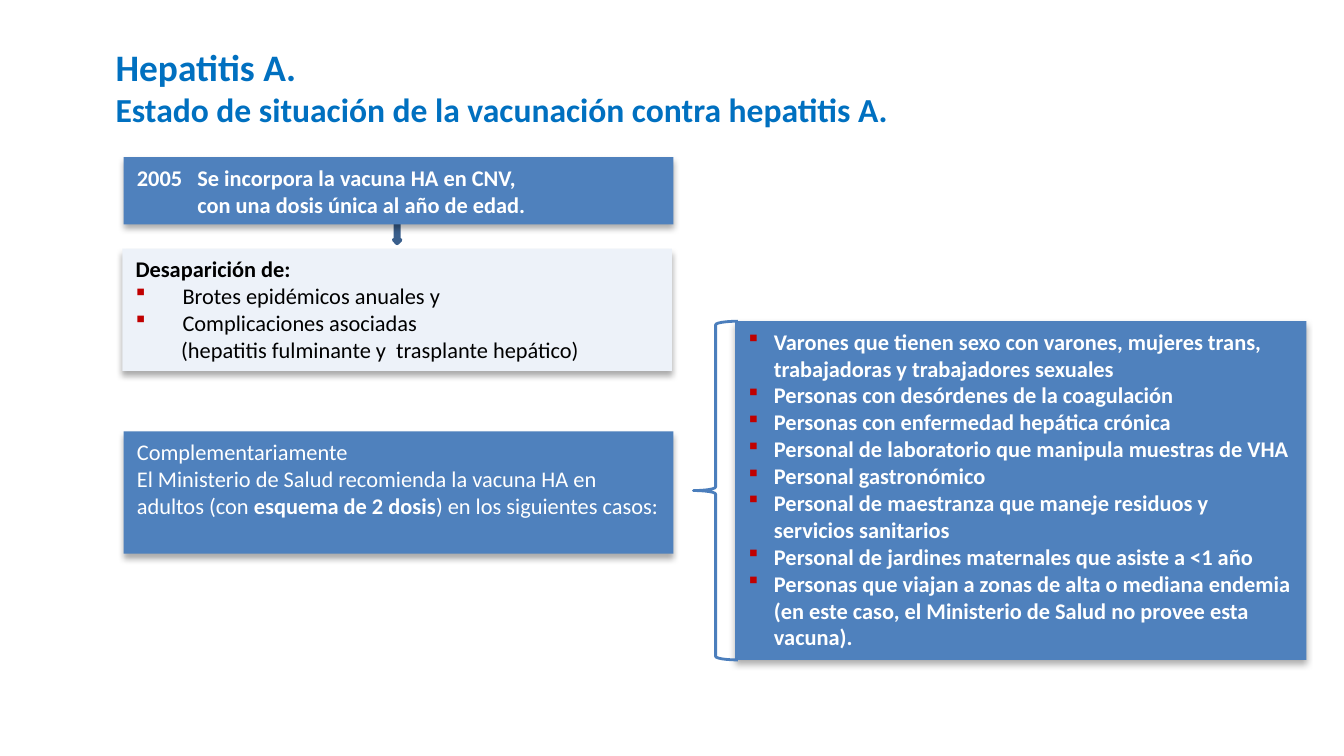
from dataclasses import dataclass

from lxml import etree
from pptx import Presentation
from pptx.dml.color import RGBColor
from pptx.enum import shapes, text
from pptx.oxml import ns
from pptx.util import Inches, Pt


@dataclass(frozen=True)
class Theme:
    font: str = "Calibri"
    bullet_font: str = "Wingdings"
    title: str = "0070C0"
    blue: str = "4F81BD"
    pale: str = "EDF2F9"
    arrow_line: str = "3A5F8C"
    brace_line: str = "4B7EBC"
    bullet: str = "C00000"
    white: str = "FFFFFF"
    black: str = "000000"
    title_size: int = 20
    subtitle_size: int = 18
    body_size: int = 12


THEME = Theme()
COLUMN_LEFT, COLUMN_WIDTH = 0.92, 4.09
GROUPS_LEFT, GROUPS_TOP, GROUPS_HEIGHT = 5.47, 2.39, 2.52
RISK_GROUPS = [
    "Varones que tienen sexo con varones, mujeres trans, trabajadoras y trabajadores sexuales",
    "Personas con desórdenes de la coagulación",
    "Personas con enfermedad hepática crónica",
    "Personal de laboratorio que manipula muestras de VHA",
    "Personal gastronómico",
    "Personal de maestranza que maneje residuos y servicios sanitarios",
    "Personal de jardines maternales que asiste a <1 año",
    "Personas que viajan a zonas de alta o mediana endemia (en este caso, "
    "el Ministerio de Salud no provee esta vacuna).",
]


def rgb(value):
    return RGBColor.from_string(value)


def add_child(parent, tag, **attributes):
    return etree.SubElement(parent, ns.qn(tag), attributes)


def style(paragraph, size, color, bold=None):
    font = paragraph.font
    font.name, font.size, font.bold = THEME.font, Pt(size), bold
    font.color.rgb = rgb(color)


def indent(paragraph, margin, first=0, bullet=False):
    """Set the left margin and first-line offset, with an optional square bullet."""
    properties = paragraph._p.get_or_add_pPr()
    properties.set("marL", str(Inches(margin)))
    properties.set("indent", str(Inches(first)))
    if bullet:
        color = add_child(properties, "a:buClr")
        add_child(color, "a:srgbClr", val=THEME.bullet)
        add_child(properties, "a:buFont", typeface=THEME.bullet_font, charset="2")
        add_child(properties, "a:buChar", char="§")  # a small square in the bullet font


def add_line(frame, runs, color, bold=None, margin=0, first=0, bullet=False):
    """Write one paragraph; runs are (wording, bold) pairs or a plain string."""
    paragraph = frame.paragraphs[0]
    if paragraph.runs:
        paragraph = frame.add_paragraph()
    paragraph.alignment = text.PP_ALIGN.LEFT
    indent(paragraph, margin, first, bullet)
    style(paragraph, THEME.body_size, color, bold)
    if isinstance(runs, str):
        runs = [(runs, bold)]
    for wording, run_bold in runs:
        run = paragraph.add_run()
        run.text = wording
        run.font.bold = run_bold


def add_shape(slide, kind, left, top, width, height, fill=None, line=None, line_width=1):
    shape = slide.shapes.add_shape(
        kind, Inches(left), Inches(top), Inches(width), Inches(height))
    shape.shadow.inherit = False
    if fill:
        shape.fill.solid()
        shape.fill.fore_color.rgb = rgb(fill)
    else:
        shape.fill.background()
    if line:
        shape.line.color.rgb = rgb(line)
        shape.line.width = Pt(line_width)
    else:
        shape.line.fill.background()
    return shape


def add_card(slide, left, top, width, height, fill):
    """Add a shadowed box and return its text frame."""
    card = add_shape(slide, shapes.MSO_SHAPE.RECTANGLE, left, top, width, height, fill)
    effects = card._element.spPr.find(ns.qn("a:effectLst"))
    shadow = add_child(effects, "a:outerShdw", blurRad=str(Pt(3.5)), dist=str(Pt(2.2)),
                       dir="5400000", rotWithShape="0")
    color = add_child(shadow, "a:srgbClr", val=THEME.black)
    add_child(color, "a:alpha", val="32000")
    frame = card.text_frame
    frame.word_wrap = True
    frame.vertical_anchor = text.MSO_ANCHOR.TOP
    return frame


def add_title(slide):
    title = slide.shapes.title
    title.left, title.top = Inches(0.76), Inches(0.27)
    title.width, title.height = Inches(8.67), Inches(0.75)
    frame = title.text_frame
    frame.text = "Hepatitis A.\nEstado de situación de la vacunación contra hepatitis A."
    frame.auto_size = text.MSO_AUTO_SIZE.NONE
    frame.vertical_anchor = text.MSO_ANCHOR.MIDDLE
    for paragraph, size in zip(frame.paragraphs, (THEME.title_size, THEME.subtitle_size)):
        paragraph.alignment = text.PP_ALIGN.LEFT
        style(paragraph, size, THEME.title, True)


def add_history(slide):
    # Arrow from the vaccine's introduction to its effect
    add_shape(slide, shapes.MSO_SHAPE.DOWN_ARROW, 2.93, 1.63, 0.05, 0.18,
              THEME.blue, THEME.arrow_line, 2)

    # Introduction in 2005
    start = add_card(slide, COLUMN_LEFT, 1.17, COLUMN_WIDTH, 0.5, THEME.blue)
    add_line(start, "2005\tSe incorpora la vacuna HA en CNV,", THEME.white, True, 0.45, -0.45)
    add_line(start, "con una dosis única al año de edad.", THEME.white, True, 0.45)

    # Effect
    effect = add_card(slide, 0.91, 1.85, COLUMN_WIDTH, 0.91, THEME.pale)
    add_line(effect, "Desaparición de:", THEME.black, True)
    for outcome in ("Brotes epidémicos anuales y", "Complicaciones asociadas"):
        add_line(effect, outcome, THEME.black, False, 0.35, -0.35, True)
    add_line(effect, "(hepatitis fulminante y  trasplante hepático)", THEME.black, False, 0.34)


def add_recommendation(slide):
    advice = add_card(slide, COLUMN_LEFT, 3.21, COLUMN_WIDTH, 0.91, THEME.blue)
    add_line(advice, "Complementariamente", THEME.white, False)
    add_line(advice, [
        ("El Ministerio de Salud recomienda la vacuna HA en adultos (con ", False),
        ("esquema de 2 dosis", True),
        (") en los siguientes casos:", False),
    ], THEME.white)

    # Groups to vaccinate, held by a brace
    groups = add_card(slide, GROUPS_LEFT, GROUPS_TOP, 4.25, GROUPS_HEIGHT, THEME.blue)
    for group in RISK_GROUPS:
        add_line(groups, group, THEME.white, True, 0.19, -0.19, True)
    brace = add_shape(slide, shapes.MSO_SHAPE.LEFT_BRACE, 5.16, GROUPS_TOP, 0.33,
                      GROUPS_HEIGHT, line=THEME.brace_line, line_width=1.5)
    brace.adjustments[0] = 0.08
    brace.adjustments[1] = 0.5


def main():
    deck = Presentation()
    deck.slide_width = Inches(10)
    deck.slide_height = deck.slide_width * 9 // 16
    slide = deck.slides.add_slide(deck.slide_layouts[5])
    add_title(slide)
    add_history(slide)
    add_recommendation(slide)
    deck.save("out.pptx")


if __name__ == "__main__":
    main()
